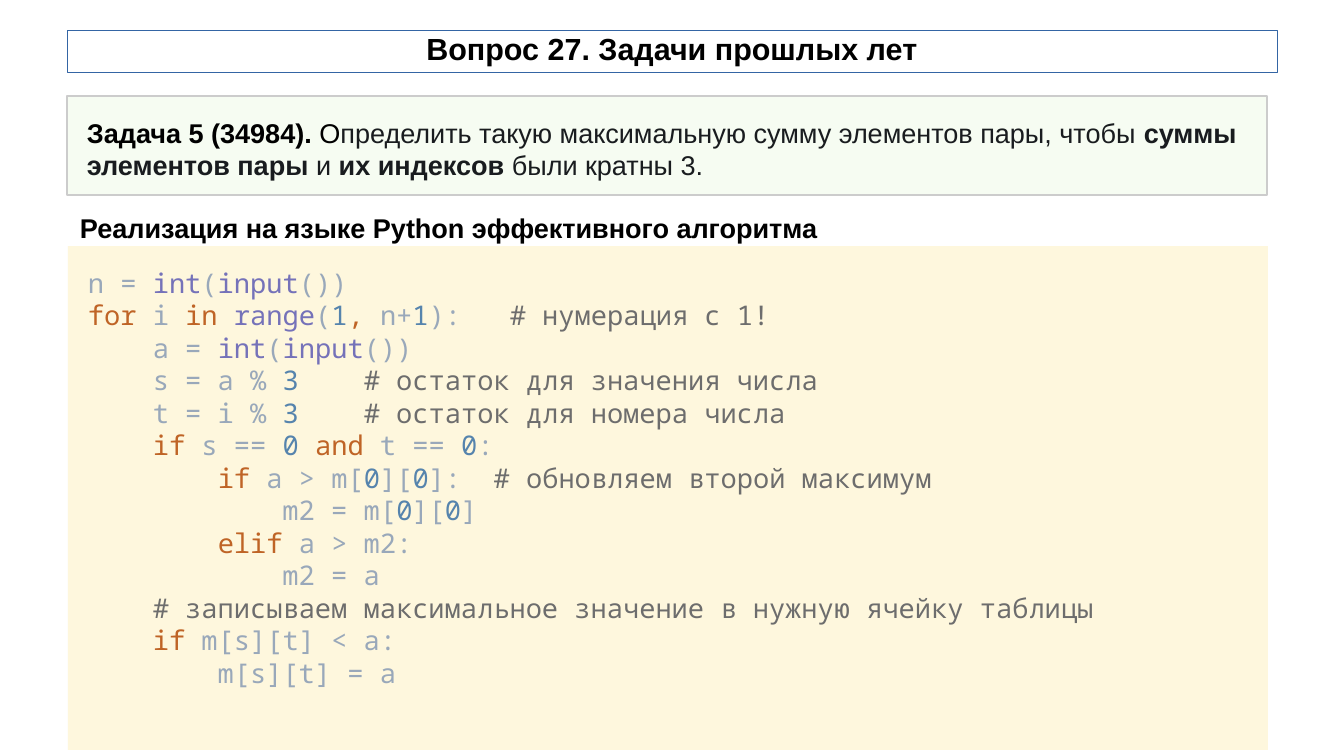
from dataclasses import dataclass
from itertools import groupby

from pptx import Presentation
from pptx.dml.color import RGBColor
from pptx.enum.shapes import MSO_SHAPE as Shape
from pptx.enum.text import MSO_ANCHOR as Anchor, MSO_AUTO_SIZE as AutoSize, PP_ALIGN as Align
from pptx.util import Emu, Pt

PX = 914400 / 122


@dataclass(frozen=True)
class Theme:
    text_font: str = "Arial"
    code_font: str = "Noto Sans Mono"
    title_size: int = 18
    body_size: int = 16
    black: str = "000000"
    ink: str = "191C1F"
    title_border: str = "3465A4"
    task_fill: str = "F6FCF2"
    task_border: str = "CCCCCC"
    code_fill: str = "FEF7DD"
    plain: str = "99A8BA"
    keyword: str = "BF6426"
    builtin: str = "7572B9"
    number: str = "5684AD"
    comment: str = "6D6D6D"


THEME = Theme()
KEYWORDS = {"for", "in", "if", "elif", "and", ","}
BUILTINS = {"int", "input", "range"}

TITLE = "Вопрос 27. Задачи прошлых лет"
HEADING = "Реализация на языке Python эффективного алгоритма"
# Task wording: text, bold, colour
TASK = [
    ("Задача 5 (34984).", True, THEME.black),
    (" О", False, THEME.black),
    ("пределить такую максимальную сумму элементов пары, чтобы ", False, THEME.ink),
    ("суммы элементов пары", True, THEME.ink),
    (" и ", False, THEME.ink),
    ("их индексов", True, THEME.ink),
    (" были кратны 3.", False, THEME.ink),
]
CODE = """n = int(input())
for i in range(1, n+1):   # нумерация с 1!
    a = int(input())
    s = a % 3    # остаток для значения числа
    t = i % 3    # остаток для номера числа
    if s == 0 and t == 0:
        if a > m[0][0]:  # обновляем второй максимум
            m2 = m[0][0]
        elif a > m2:
            m2 = a
    # записываем максимальное значение в нужную ячейку таблицы
    if m[s][t] < a:
        m[s][t] = a"""


def px(length):
    return Emu(round(length * PX))


def rgb(colour):
    return RGBColor.from_string(colour)


def set_font(font, name, size, colour=None, bold=None):
    font.name, font.size, font.bold = name, Pt(size), bold
    if colour:
        font.color.rgb = rgb(colour)


def set_frame(frame, inset_x, inset_y, anchor=Anchor.TOP):
    frame.word_wrap = True
    frame.auto_size = AutoSize.NONE
    frame.vertical_anchor = anchor
    frame.margin_left = frame.margin_right = px(inset_x)
    frame.margin_top = frame.margin_bottom = px(inset_y)


def add_runs(paragraph, runs):
    for text, bold, colour in runs:
        run = paragraph.add_run()
        run.text = text
        run.font.bold = bold
        run.font.color.rgb = rgb(colour)


def add_panel(slide, box, fill, border=None):
    panel = slide.shapes.add_shape(Shape.RECTANGLE, *map(px, box))
    panel.shadow.inherit = False
    panel.fill.solid()
    panel.fill.fore_color.rgb = rgb(fill)
    if border:
        panel.line.color.rgb = rgb(border)
        panel.line.width = Pt(0)
    else:
        panel.line.fill.background()
    set_frame(panel.text_frame, 20, 20)
    return panel.text_frame


def token_colour(token):
    word = token.strip()
    if word in KEYWORDS:
        return THEME.keyword
    if word in BUILTINS:
        return THEME.builtin
    return THEME.number if word.isdigit() else THEME.plain


def highlight(line):
    """Split a code line into runs of one colour each."""
    statement, mark, remark = line.partition("#")
    tokens = ["".join(chars) for _, chars in groupby(statement, str.isalnum)]
    runs = [("".join(group), None, colour) for colour, group in groupby(tokens, token_colour)]
    if mark:
        runs.append((mark + remark, None, THEME.comment))
    return runs


def fill_title(slide):
    title = slide.shapes.title
    title.left, title.top, title.width, title.height = map(px, (67, 30, 1210, 42))
    title.line.color.rgb = rgb(THEME.title_border)
    title.line.width = Pt(0.28)
    set_frame(title.text_frame, 5, 0, Anchor.MIDDLE)
    paragraph = title.text_frame.paragraphs[0]
    paragraph.text = TITLE
    paragraph.alignment = Align.CENTER
    paragraph.line_spacing = 0.9
    set_font(paragraph.font, THEME.text_font, THEME.title_size, THEME.black, True)


def add_task(slide):
    paragraph = add_panel(slide, (67, 96, 1200, 99), THEME.task_fill, THEME.task_border).paragraphs[0]
    paragraph.alignment = Align.LEFT
    paragraph.space_before, paragraph.space_after = Pt(11.9), Pt(9.9)
    set_font(paragraph.font, THEME.text_font, THEME.body_size)
    add_runs(paragraph, TASK)


def add_heading(slide):
    heading = slide.shapes.add_textbox(*map(px, (68, 205, 1196, 43)))
    set_frame(heading.text_frame, 12, 6)
    paragraph = heading.text_frame.paragraphs[0]
    paragraph.text = HEADING
    set_font(paragraph.font, THEME.text_font, THEME.body_size, THEME.black, True)


def add_code(slide):
    frame = add_panel(slide, (68, 246, 1200, 504), THEME.code_fill)
    for index, line in enumerate(CODE.splitlines()):
        paragraph = frame.add_paragraph() if index else frame.paragraphs[0]
        paragraph.alignment = Align.LEFT
        set_font(paragraph.font, THEME.code_font, THEME.body_size)
        add_runs(paragraph, highlight(line))


def main():
    deck = Presentation()
    deck.slide_width, deck.slide_height = px(1344), px(756)
    slide = deck.slides.add_slide(deck.slide_layouts.get_by_name("Title Only"))
    # Code goes first, so that the heading lies over its top edge
    add_code(slide)
    fill_title(slide)
    add_task(slide)
    add_heading(slide)
    deck.save("out.pptx")


if __name__ == "__main__":
    main()
